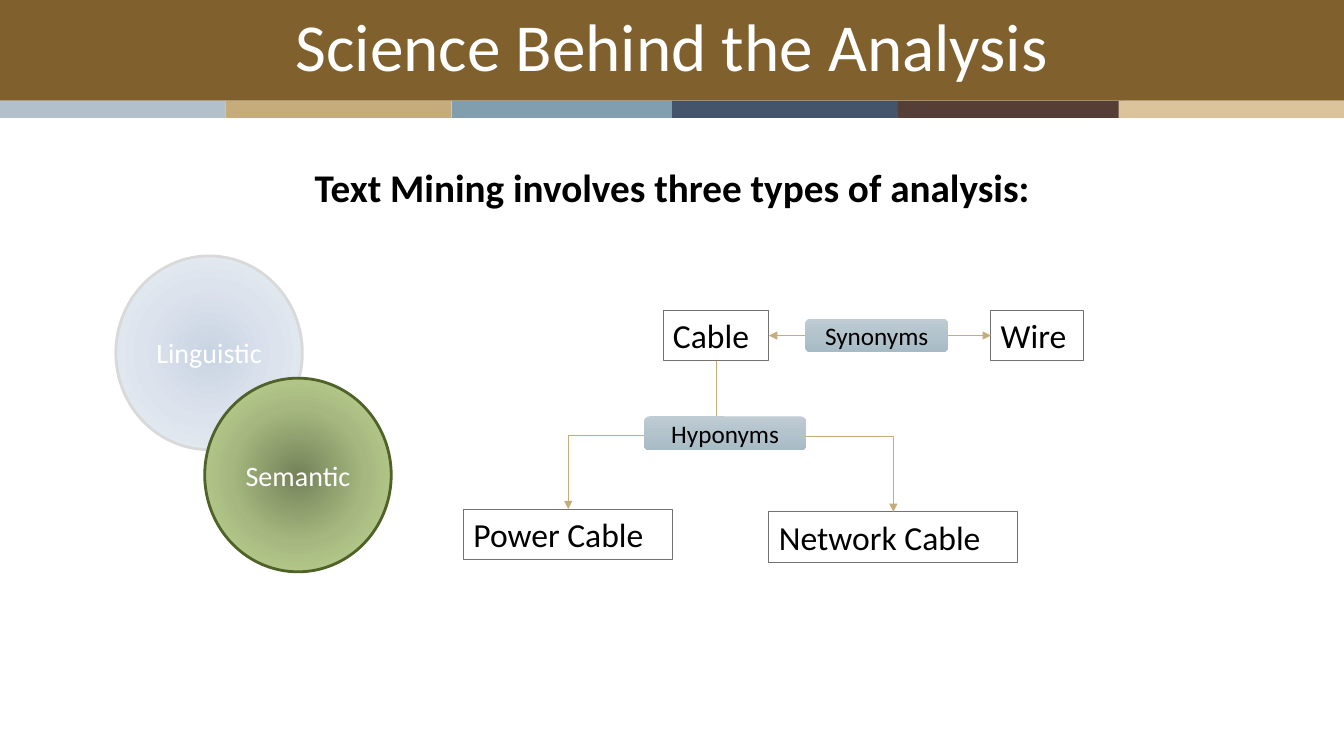
from lxml import etree
from pptx import Presentation
from pptx import util as u
from pptx.dml.color import RGBColor
from pptx.enum import shapes, text
from pptx.oxml import ns

# Content; places are left, top, width, height in cm
WIDTH, HEIGHT = 33.87, 19.05
FONT = "Calibri"
TITLE = "Science Behind the Analysis"
SUBTITLE = "Text Mining involves three types of analysis:"
BAND = "80612E"
STRIPS = [(0, "B1C0C9"), (5.69, "C6AC7A"), (11.38, "809EAD"),
          (16.94, "44546A"), (22.63, "543E36"), (28.19, "DBC49C")]
CIRCLES = [
    ("Linguistic", 2.92, 6.45, ["C9D4E3", "DCE3ED", "EDF1F5"], "D9D9D9"),
    ("Semantic", 5.16, 9.53, ["748259", "A6B87F", "C5DB97"], "4F6228"),
]
TERMS = {
    "Cable": (16.71, 7.82, 2.67, 1.27),
    "Wire": (24.97, 7.82, 2.34, 1.27),
    "Network Cable": (19.38, 12.9, 6.27, 1.27),
    "Power Cable": (11.68, 12.83, 5.28, 1.27),
}
RELATIONS = {
    "Synonyms": (20.29, 8.03, 3.61, 0.84),
    "Hyponyms": (16.23, 10.49, 4.09, 0.86),
}
RELATION_FILL = ["BFCCD4", "B3C3CC", "A7BBC6"]
ARROW = "C6AC7A"
TOP, LEFT, BOTTOM, RIGHT = range(4)  # connection sites of a rectangle

deck = Presentation()
deck.slide_width, deck.slide_height = u.Cm(WIDTH), u.Cm(HEIGHT)
page = deck.slides.add_slide(deck.slide_layouts[5])


def color(value):
    return RGBColor.from_string(value)


def write(shape, words, size, ink="000000", bold=False, spacing=None, before=0,
          align=text.PP_ALIGN.CENTER, anchor=text.MSO_ANCHOR.MIDDLE):
    frame = shape.text_frame
    frame.word_wrap = True
    frame.auto_size = text.MSO_AUTO_SIZE.NONE
    frame.vertical_anchor = anchor
    para = frame.paragraphs[0]
    para.alignment = align
    para.line_spacing = spacing
    para.space_before = u.Pt(before)
    span = para.add_run()
    span.text = words
    font = span.font
    font.name, font.size, font.bold = FONT, u.Pt(size), bold
    font.color.rgb = color(ink)


def add_box(kind, place, fill=None, line=None, weight=0.75):
    box = page.shapes.add_shape(kind, *map(u.Cm, place))
    box.shadow.inherit = False
    if fill:
        box.fill.solid()
        box.fill.fore_color.rgb = color(fill)
    else:
        box.fill.background()
    if line:
        box.line.color.rgb = color(line)
        box.line.width = u.Pt(weight)
    else:
        box.line.fill.background()
    return box


def shade(box, stops, radial=False):
    """Replace the empty fill with a three-stop gradient."""
    gradient = etree.Element(ns.qn("a:gradFill"), rotWithShape="1")
    stop_list = etree.SubElement(gradient, ns.qn("a:gsLst"))
    for index, value in enumerate(stops):
        stop = etree.SubElement(stop_list, ns.qn("a:gs"), pos=str(index * 50000))
        etree.SubElement(stop, ns.qn("a:srgbClr"), val=value)
    if radial:
        circle = etree.SubElement(gradient, ns.qn("a:path"), path="circle")
        etree.SubElement(circle, ns.qn("a:fillToRect"),
                         {side: "50000" for side in "ltrb"})
    else:
        etree.SubElement(gradient, ns.qn("a:lin"), ang="5400000", scaled="0")
    props = box._element.spPr
    props.replace(props.find(ns.qn("a:noFill")), gradient)


def connect(kind, start, start_site, end, end_site, ends):
    link = page.shapes.add_connector(kind, 0, 0, 0, 0)
    link.begin_connect(start, start_site)
    link.end_connect(end, end_site)
    link.line.color.rgb = color(ARROW)
    link.line.width = u.Pt(0.5)
    for name in ends:
        etree.SubElement(link.line._get_or_add_ln(), ns.qn("a:" + name), type="triangle")
    etree.SubElement(link._element.spPr, ns.qn("a:effectLst"))
    return link


def turn_downward(link):
    """Rotate an elbow so that it leaves and arrives vertically."""
    run = link.end_x - link.begin_x
    drop = link.end_y - link.begin_y
    middle_x = (link.begin_x + link.end_x) // 2
    middle_y = (link.begin_y + link.end_y) // 2
    frame = link._element.spPr.xfrm
    frame.attrib.clear()
    frame.set("rot", "16200000" if run > 0 else "5400000")
    if run > 0:
        frame.set("flipH", "1")
    link.width, link.height = drop, abs(run)
    link.left, link.top = middle_x - drop // 2, middle_y - abs(run) // 2


# Header band and colour strips
shape_kind = shapes.MSO_SHAPE
add_box(shape_kind.RECTANGLE, (0, 0, WIDTH, 2.54), BAND)
for left, value in STRIPS:
    add_box(shape_kind.RECTANGLE, (left, 2.54, 5.69, 0.43), value)

# Types of analysis
for words, left, top, stops, outline in CIRCLES:
    circle = add_box(shape_kind.OVAL, (left, top, 4.7, 4.88), line=outline, weight=2)
    shade(circle, stops, radial=True)
    write(circle, words, 20, "FFFFFF")

# Terms and the arrows between them
terms = {}
for words, place in TERMS.items():
    terms[words] = add_box(shape_kind.RECTANGLE, place, line="767171")
    write(terms[words], words, 24, align=text.PP_ALIGN.LEFT)

line_kind = shapes.MSO_CONNECTOR
connect(line_kind.STRAIGHT, terms["Cable"], RIGHT, terms["Wire"], LEFT,
        ["headEnd", "tailEnd"])
for child in ("Power Cable", "Network Cable"):
    turn_downward(connect(line_kind.ELBOW, terms["Cable"], BOTTOM,
                          terms[child], TOP, ["tailEnd"]))

# Relation labels on top of the arrows
for words, place in RELATIONS.items():
    label = add_box(shape_kind.ROUNDED_RECTANGLE, place)
    shade(label, RELATION_FILL)
    write(label, words, 18)

# Subtitle and title
subtitle = page.shapes.add_textbox(*map(u.Cm, (0, 4.22, WIDTH, 1.3)))
write(subtitle, SUBTITLE, 28, bold=True, spacing=0.8, before=10,
      anchor=text.MSO_ANCHOR.TOP)

title = page.shapes.title
title.left, title.top, title.width, title.height = map(u.Cm, (0, 0, WIDTH, 2.51))
write(title, TITLE, 48, "FFFFFF", spacing=0.9)
page.shapes._spTree.append(title._element)  # bring in front of the band

deck.save("out.pptx")
